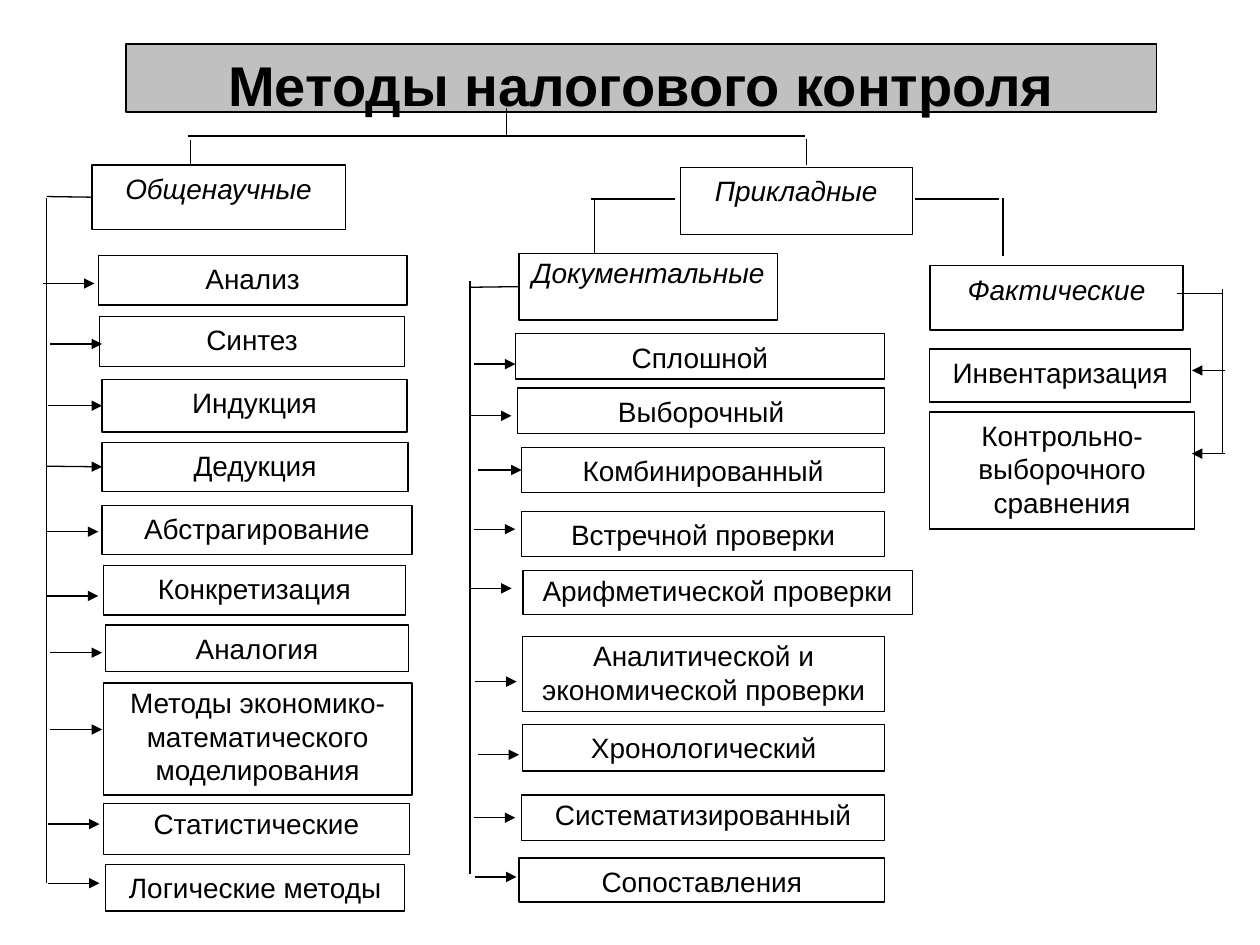
from pptx import Presentation, util as u
from pptx.dml.color import RGBColor
from pptx.enum import shapes, text
from pptx.oxml.ns import qn
from lxml import etree

PX = 9144
HUE = {"ink": "000000", "paper": "FFFFFF", "band": "C0C0C0"}
GENERAL = [
    ("Анализ", (41, 72, 245, 39), 5, (-3, 94)),
    ("Синтез", (42, 120, 242, 40), 5, (3, 142)),
    ("Индукция", (44, 170, 242, 42), 5, (1, 191)),
    ("Дедукция", (44, 220, 243, 39), 5, (0, 239)),
    ("Абстрагирование", (44, 270, 246, 39), 5, (0, 291)),
    ("Конкретизация", (45, 318, 240, 39), 5, (0, 342)),
    ("Аналогия", (47, 365, 240, 37), 5, (3, 387)),
    ("Методы экономико-математического моделирования", (45, 411, 245, 89), 2, (3, 448)),
    ("Статистические", (45, 507, 243, 40), 2, (1, 523)),
    ("Логические методы", (47, 555, 237, 37), 5, (1, 570)),
]
PAPERS = [
    ("Сплошной", (36, 64, 293, 36), 5, (3, 88)),
    ("Выборочный", (38, 107, 291, 36), 5, (0, 129)),
    ("Комбинированный", (41, 154, 288, 36), 5, (6, 172)),
    ("Встречной проверки", (41, 205, 288, 36), 5, (3, 219)),
    ("Арифметической проверки", (42, 252, 309, 35), 2, (0, 266)),
    ("Аналитической и экономической проверки", (42, 304, 287, 60), 2, (4, 340)),
    ("Хронологический", (42, 374, 287, 37), 5, (6, 398)),
    ("Систематизированный", (41, 430, 288, 36), 2, (3, 448)),
    ("Сопоставления", (39, 480, 290, 35), 5, (4, 495)),
]
FACTS = [
    ("Инвентаризация", (0, 66, 207, 42), 5, (234, 83)),
    ("Контрольно-выборочного сравнения", (0, 116, 210, 93), 5, (234, 149)),
]


def color(name):
    """Return a palette colour."""
    return RGBColor.from_string(HUE[name])


def style(shape, words, fill="paper", size=16, pad=5, bold=False, slant=False):
    """Fill, outline and letter a box."""
    shape.fill.solid()
    shape.fill.fore_color.rgb = color(fill)
    shape.line.color.rgb = color("ink")
    shape.line.width = u.Pt(0.75)
    frame = shape.text_frame
    frame.text = words
    frame.word_wrap = True
    frame.auto_size = text.MSO_AUTO_SIZE.NONE
    frame.vertical_anchor = text.MSO_ANCHOR.TOP
    frame.margin_top = frame.margin_bottom = pad * PX
    frame.margin_left = frame.margin_right = (10 if pad == 5 else pad) * PX
    para = frame.paragraphs[0]
    para.alignment = text.PP_ALIGN.CENTER
    font = para.font
    font.name, font.size, font.bold, font.italic = "Arial", u.Pt(size), bold, slant
    font.color.rgb = color("ink")


def block(slide, spot, box, words, **look):
    """Add a lettered rectangle at an offset from a spot."""
    x, y, w, h = box
    shape = slide.shapes.add_shape(
        shapes.MSO_SHAPE.RECTANGLE,
        (spot[0] + x) * PX, (spot[1] + y) * PX, w * PX, h * PX)
    shape.shadow.inherit = False
    style(shape, words, **look)
    return shape


def wire(slide, spot, start, end, goal=None, arrow=False):
    """Add a line, joined to its goal when it meets the middle of a side."""
    ends = [(spot[i] + point[i]) * PX for point in (start, end) for i in (0, 1)]
    line = slide.shapes.add_connector(shapes.MSO_CONNECTOR.STRAIGHT, *ends)
    line.line.color.rgb = color("ink")
    line.line.width = u.Pt(0.75)
    if arrow:
        etree.SubElement(line.line._get_or_add_ln(), qn("a:tailEnd"), type="triangle")
    etree.SubElement(line._element.spPr, qn("a:effectLst"))
    if goal is not None:
        left = start[0] < end[0]
        side = goal.left if left else goal.left + goal.width
        mid = goal.top + goal.height / 2
        if abs(ends[2] - side) <= 3 * PX and abs(ends[3] - mid) <= PX:
            line.end_connect(goal, 1 if left else 3)


def crown(slide, box):
    """Place the title band and the fork below it."""
    x, y, w, h = box
    title = slide.shapes.title
    title.left, title.top, title.width, title.height = (n * PX for n in box)
    style(title, "Методы налогового контроля", "band", 32, bold=True)
    for start, end in [((49, 73), (539, 73)), ((302, 51), (302, 72)),
                       ((51, 76), (51, 97)), ((540, 75), (540, 96))]:
        wire(slide, (x, y), start, end)


def applied(slide, box):
    """Place the applied methods box and its two branches."""
    x, y, w, h = box
    block(slide, (x, y), (0, 0, w, h), "Прикладные", slant=True)
    for near, far, drop in [(-4, -71, -68), (w + 2, w + 69, w + 72)]:
        wire(slide, (x, y), (near, 25), (far, 25))
        wire(slide, (x, y), (drop, 24), (drop, 70))


def branch(slide, spot, words, head, spine, stem, rows, reach, pad=5):
    """Place a headed list of methods hung on a spine."""
    top = block(slide, spot, head, words, slant=True, pad=pad)
    x, high, low = spine
    wire(slide, spot, (x, low), (x, high))
    wire(slide, spot, (x, stem[1]), stem, top)
    for label, box, inset, (tail, y) in rows:
        goal = block(slide, spot, box, label, pad=inset)
        wire(slide, spot, (tail, y), (tail + reach, y), goal, True)


def main():
    """Build and save the slide."""
    deck = Presentation()
    deck.slide_width, deck.slide_height = 1000 * PX, 750 * PX
    slide = deck.slides.add_slide(deck.slide_layouts[5])
    crown(slide, (100, 35, 818, 54))
    applied(slide, (540, 133, 184, 53))
    branch(slide, (37, 131), "Общенаучные", (36, 0, 201, 51),
           (0, 26, 570), (38, 25), GENERAL, 41)
    branch(slide, (373, 201), "Документальные", (39, 0, 205, 53),
           (0, 22, 493), (38, 27), PAPERS, 33, 2)
    branch(slide, (738, 211), "Фактические", (0, 0, 201, 51),
           (232, 18, 149), (196, 22), FACTS, -26)
    deck.save("out.pptx")


if __name__ == "__main__":
    main()
